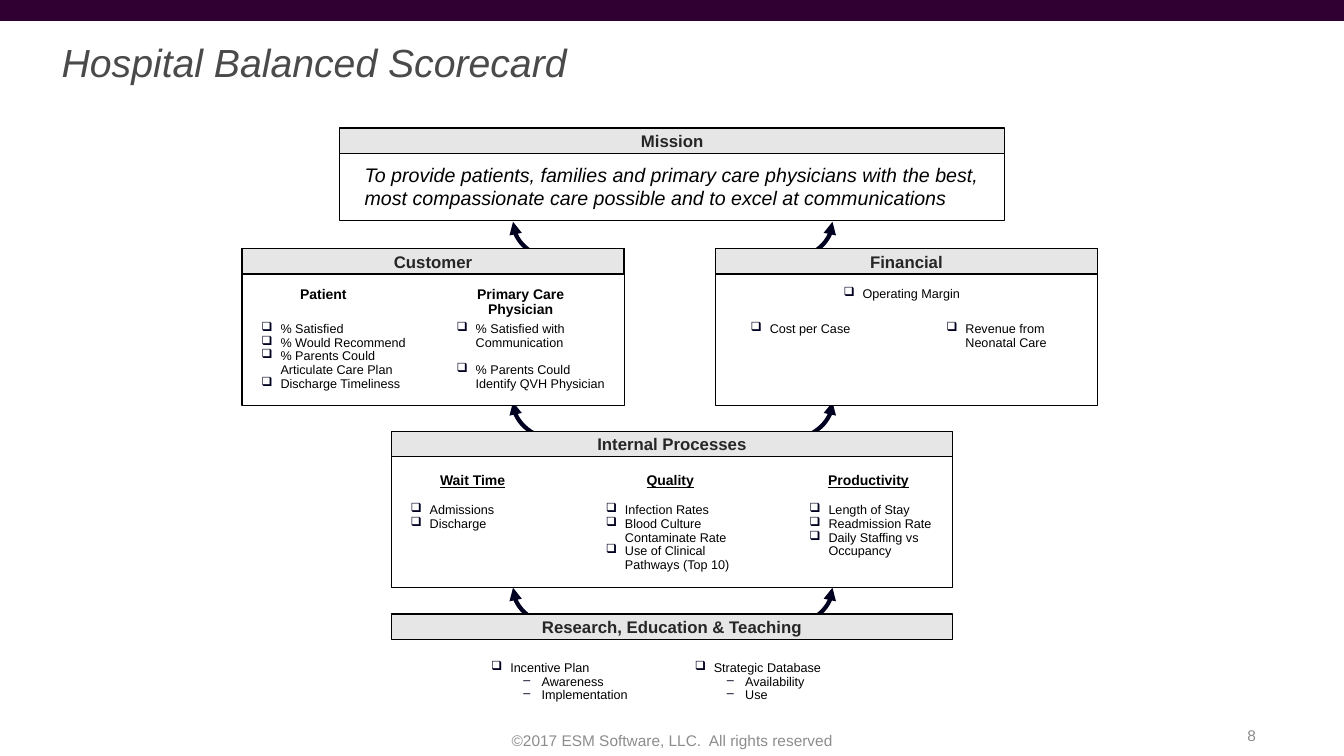
import math
from dataclasses import dataclass

import pptx
import pptx.dml.color
import pptx.enum.shapes
import pptx.enum.text
import pptx.oxml
import pptx.oxml.ns
import pptx.util

Cm = pptx.util.Cm
Pt = pptx.util.Pt
RGBColor = pptx.dml.color.RGBColor
ALIGN = pptx.enum.text.PP_ALIGN
ANCHOR = pptx.enum.text.MSO_ANCHOR

PLUM = RGBColor(0x31, 0x00, 0x32)
NAVY = RGBColor(0x00, 0x00, 0x20)
BLACK = RGBColor(0x00, 0x00, 0x00)
WHITE = RGBColor(0xFF, 0xFF, 0xFF)
HEADER_GREY = RGBColor(0xE7, 0xE6, 0xE6)
HEADER_TEXT = RGBColor(0x26, 0x26, 0x26)
TITLE_GREY = RGBColor(0x4A, 0x4A, 0x4A)
FOOTER_GREY = RGBColor(0x8C, 0x8C, 0x8C)

TITLE_FONT = {"size": Pt(28), "italic": True, "bold": False}
HEADER_FONT = {"size": Pt(12), "bold": True}
MISSION_FONT = {"size": Pt(14), "italic": True}
HEADING_FONT = {"size": Pt(10), "bold": True}
UNDERLINED_FONT = {"size": Pt(10), "bold": True, "underline": True}
ITEM_FONT = {"size": Pt(9)}
FOOTER_FONT = {"size": Pt(11)}
TIGHT = {"line_spacing": 0.9}
TIGHT_CENTRED = {"line_spacing": 0.9, "alignment": ALIGN.CENTER}
INSET = Cm(0.13)
SMALL_FRAME = {"word_wrap": True, "margin_left": INSET, "margin_right": INSET,
               "margin_top": INSET, "margin_bottom": INSET}
HEADER_HEIGHT = 0.64
BULLETS = (("❑", 0.48, -0.48), ("–", 1.27, -0.46))


@dataclass
class Box:
    """A rectangle in centimetres."""
    left: float
    top: float
    width: float
    height: float

    def inner(self, left, top, width, height):
        """Return a box whose corner is offset from this one's corner."""
        return Box(self.left + left, self.top + top, width, height)

    def lengths(self):
        """Return left, top, width and height as lengths."""
        return [Cm(value) for value in (self.left, self.top, self.width, self.height)]


def apply(target, values):
    """Set every attribute in a dict of format values."""
    for name, value in values.items():
        setattr(target, name, value)


def write(para, text, font, color=BLACK, layout=None):
    """Add one formatted span to a paragraph."""
    apply(para, layout or {})
    span = para.add_run()
    span.text = text
    apply(span.font, {"name": "Arial", **font})
    span.font.color.rgb = color


def add_text(page, box, text, font, color=BLACK, frame=None, layout=None):
    """Add a text box with one paragraph."""
    text_frame = page.shapes.add_textbox(*box.lengths()).text_frame
    apply(text_frame, frame or {"word_wrap": True})
    write(text_frame.paragraphs[0], text, font, color, layout)


def add_heading(page, box, text, font=HEADING_FONT):
    """Add a centred column heading."""
    add_text(page, box, text, font, frame=SMALL_FRAME, layout=TIGHT_CENTRED)


def add_bullet(para, level):
    """Give a paragraph its indent and bullet character."""
    mark, margin, indent = BULLETS[level]
    para.level = level
    props = para._p.get_or_add_pPr()
    props.set("marL", str(Cm(margin)))
    props.set("indent", str(Cm(indent)))
    space = pptx.oxml.ns.nsdecls("a")
    for xml in (f'<a:buClr {space}><a:srgbClr val="{NAVY}"/></a:buClr>',
                f'<a:buChar {space} char="{mark}"/>'):
        props.append(pptx.oxml.parse_xml(xml))


def add_items(page, box, items, children=(), gap=0):
    """Add a checkbox list, with dashed children below it."""
    text_frame = page.shapes.add_textbox(*box.lengths()).text_frame
    apply(text_frame, SMALL_FRAME)
    entries = [(item, 0) for item in items] + [(child, 1) for child in children]
    for index, (text, level) in enumerate(entries):
        para = text_frame.add_paragraph() if index else text_frame.paragraphs[0]
        add_bullet(para, level)
        if index and gap:
            para.space_before = Pt(gap)
        write(para, text, ITEM_FONT, layout=TIGHT)


def add_rectangle(page, box, fill, line_width=0):
    """Add a flat rectangle, outlined in black if a width is given."""
    shape = page.shapes.add_shape(pptx.enum.shapes.MSO_SHAPE.RECTANGLE, *box.lengths())
    shape.shadow.inherit = False
    shape.fill.solid()
    shape.fill.fore_color.rgb = fill
    if line_width:
        shape.line.color.rgb = BLACK
        shape.line.width = Pt(line_width)
    else:
        shape.line.fill.background()
    return shape


def add_panel(page, box, title):
    """Add a framed panel with a grey header."""
    if box.height > HEADER_HEIGHT:
        add_rectangle(page, box, WHITE, 0.75)
    header = add_rectangle(page, box.inner(0, 0, box.width, HEADER_HEIGHT), HEADER_GREY, 1)
    header.text_frame.vertical_anchor = ANCHOR.MIDDLE
    write(header.text_frame.paragraphs[0], title, HEADER_FONT, HEADER_TEXT,
          {"alignment": ALIGN.CENTER})


def add_arrow(page, box, side):
    """Add a quarter-curve arrow rising to the outer top corner; side is -1 or 1."""
    centre = box.left + (box.width if side < 0 else 0)
    points = [(Cm(centre + side * box.width * math.cos(math.radians(angle))),
               Cm(box.top + box.height * math.sin(math.radians(angle))))
              for angle in range(60, -1, -5)]
    builder = page.shapes.build_freeform(*points[0])
    builder.add_line_segments(points[1:], close=False)
    arrow = builder.convert_to_shape()
    arrow.shadow.inherit = False
    arrow.fill.background()
    arrow.line.color.rgb = NAVY
    arrow.line.width = Pt(3)
    outline = arrow._element.spPr.find(pptx.oxml.ns.qn("a:ln"))
    outline.append(pptx.oxml.parse_xml(
        f'<a:tailEnd {pptx.oxml.ns.nsdecls("a")} type="triangle"/>'))


def add_mission(page, box):
    """Add the mission statement."""
    add_panel(page, box, "Mission")
    add_text(page, box.inner(0.38, 0.74, 16.08, 1.45),
             "To provide patients, families and primary care physicians with the best, "
             "most compassionate care possible and to excel at communications", MISSION_FONT)


def add_customer(page, box):
    """Add the customer measures."""
    add_panel(page, box, "Customer")
    add_heading(page, box.inner(1.07, 0.84, 1.96, 0.66), "Patient")
    add_heading(page, box.inner(5.23, 0.84, 3.58, 0.66), "Primary Care Physician")
    add_items(page, box.inner(0.36, 1.73, 4.42, 2.06),
              ["% Satisfied", "% Would Recommend", "% Parents Could Articulate Care Plan",
               "Discharge Timeliness"])
    add_items(page, box.inner(5.28, 1.73, 4.14, 2.06),
              ["% Satisfied with Communication", "% Parents Could Identify QVH Physician"],
              gap=9.9)


def add_financial(page, box):
    """Add the financial measures."""
    add_panel(page, box, "Financial")
    for left, top, width, item in ((3.1, 0.84, 3.35, "Operating Margin"),
                                   (0.76, 1.73, 3.58, "Cost per Case"),
                                   (5.69, 1.73, 3.58, "Revenue from Neonatal Care")):
        add_items(page, box.inner(left, top, width, 0.84), [item])


def add_processes(page, box):
    """Add the three columns of internal process measures."""
    add_panel(page, box, "Internal Processes")
    columns = (
        ("Wait Time", 1.07, 1.96, 0.36, ["Admissions", "Discharge"]),
        ("Quality", 6.05, 1.96, 5.28, ["Infection Rates", "Blood Culture Contaminate Rate",
                                       "Use of Clinical Pathways (Top 10)"]),
        ("Productivity", 10.69, 2.67, 10.41, ["Length of Stay", "Readmission Rate",
                                              "Daily Staffing vs Occupancy"]))
    for heading, heading_left, heading_width, list_left, items in columns:
        add_heading(page, box.inner(heading_left, 0.94, heading_width, 0.66), heading,
                    UNDERLINED_FONT)
        add_items(page, box.inner(list_left, 1.7, 3.58, 0.84), items)


def add_research(page, box):
    """Add the research header and the lists below it."""
    add_panel(page, box, "Research, Education & Teaching")
    for left, item, children in ((2.39, "Incentive Plan", ["Awareness", "Implementation"]),
                                 (7.52, "Strategic Database", ["Availability", "Use"])):
        add_items(page, box.inner(left, 1.07, 4.27, 1.3), [item], children)


def add_page_frame(page, box):
    """Add the top bar, title, copyright line and page number."""
    add_rectangle(page, box.inner(0, 0, box.width, 0.53), PLUM)
    title = page.shapes.title
    apply(title, dict(zip(("left", "top", "width", "height"),
                          box.inner(1.3, 0.97, 23.5, 1.27).lengths())))
    title.text_frame.vertical_anchor = ANCHOR.TOP
    write(title.text_frame.paragraphs[0], "Hospital Balanced Scorecard", TITLE_FONT,
          TITLE_GREY, {"alignment": ALIGN.LEFT, "line_spacing": 0.9})
    for left, top, width, text, alignment in (
            (11.23, 18.14, 11.43, "©2017 ESM Software, LLC.  All rights reserved", ALIGN.CENTER),
            (24.28, 18.03, 7.62, "8", ALIGN.RIGHT)):
        add_text(page, box.inner(left, top, width, 1.02), text, FOOTER_FONT, FOOTER_GREY,
                 {"word_wrap": True, "vertical_anchor": ANCHOR.MIDDLE},
                 {"alignment": alignment})


def main():
    """Build the scorecard slide and save it."""
    deck = pptx.Presentation()
    deck.slide_width, deck.slide_height = Cm(33.87), Cm(19.05)
    page = deck.slides.add_slide(deck.slide_layouts[5])
    add_page_frame(page, Box(0, 0, 33.87, 19.05))
    for top in (14.81, 10.13, 5.59):
        for left, side in ((12.93, -1), (19.74, 1)):
            add_arrow(page, Box(left, top, 1.24, 0.97), side)
    add_processes(page, Box(9.86, 10.87, 14.15, 3.94))
    add_mission(page, Box(8.56, 3.23, 16.76, 2.33))
    add_research(page, Box(9.86, 15.47, 14.15, HEADER_HEIGHT))
    add_customer(page, Box(6.1, 6.27, 9.63, 3.94))
    add_financial(page, Box(18.03, 6.27, 9.63, 3.94))
    deck.save("out.pptx")


if __name__ == "__main__":
    main()
